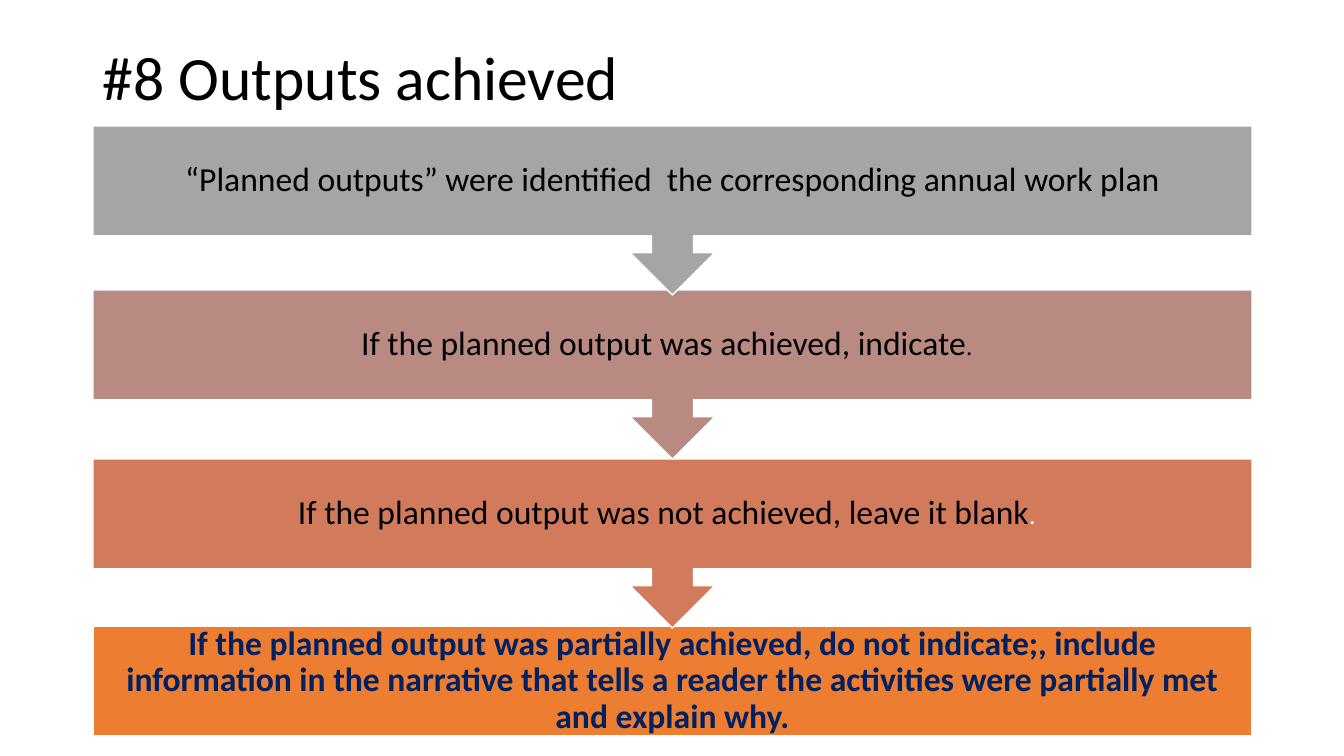
from pptx import Presentation
from pptx.dml.color import RGBColor
from pptx.enum import shapes, text
from pptx.util import Pt

EMU_PER_PIXEL = 914400 / 100.8
FONT = "Calibri"
COLORS = {
    "black": "000000", "white": "FFFFFF", "navy": "002060",
    "gray": "A5A5A5", "rose": "B98A82", "rust": "D17B5C", "orange": "ED7D31",
}
TITLE = "#8 Outputs achieved"
FULL_STOP = ".\u00a0\u00a0"
# Each step: top, fill, runs of (wording, size, colour, bold)
STEPS = [
    (126, "gray", [("“Planned outputs” were identified  the corresponding annual work plan",
                    24, "black", False)]),
    (290, "rose", [("If the planned output was achieved, indicate", 24, "black", False),
                   (FULL_STOP, 18, "black", False)]),
    (459, "rust", [("If the planned output was not achieved, leave it blank", 24, "black", False),
                   (FULL_STOP, 18, "white", False)]),
    (626, "orange", [("If the planned\u00a0output was partially achieved, do not indicate;, "
                      "include information in the narrative that tells a reader the "
                      "activities were partially met and explain why.", 24, "navy", True)]),
]
LEFT, WIDTH = 93, 1159
BOX_HEIGHT, CALLOUT_HEIGHT = 110, 169
INSET = 19


def px(length):
    """Turn pixels into EMU."""
    return round(length * EMU_PER_PIXEL)


def color(name):
    """Look up a named colour."""
    return RGBColor.from_string(COLORS[name])


def write(shape, runs, alignment):
    """Write one middle-anchored paragraph into a shape."""
    frame = shape.text_frame
    frame.word_wrap = True
    frame.vertical_anchor = text.MSO_ANCHOR.MIDDLE
    paragraph = frame.paragraphs[0]
    paragraph.alignment = alignment
    paragraph.line_spacing = 0.9
    for wording, size, color_name, bold in runs:
        run = paragraph.add_run()
        run.text = wording
        run.font.name = FONT
        run.font.size = Pt(size)
        run.font.bold = bold
        run.font.color.rgb = color(color_name)


def add_step(slide, top, fill, runs, is_last):
    """Add a step; every step but the last points down to the next."""
    kind = shapes.MSO_SHAPE.RECTANGLE if is_last else shapes.MSO_SHAPE.DOWN_ARROW_CALLOUT
    height = BOX_HEIGHT if is_last else CALLOUT_HEIGHT
    shape = slide.shapes.add_shape(kind, px(LEFT), px(top), px(WIDTH), px(height))
    shape.shadow.inherit = False
    shape.fill.solid()
    shape.fill.fore_color.rgb = color(fill)
    shape.line.color.rgb = color("white")
    shape.line.width = Pt(1)
    frame = shape.text_frame
    frame.margin_left = frame.margin_right = px(INSET)
    frame.margin_top = frame.margin_bottom = px(INSET)
    write(shape, runs, text.PP_ALIGN.CENTER)


presentation = Presentation()
presentation.slide_width, presentation.slide_height = px(1344), px(756)
slide = presentation.slides.add_slide(presentation.slide_layouts[6])

title = slide.shapes.add_textbox(px(LEFT), px(40), px(WIDTH), px(82))
write(title, [(TITLE, 44, "black", False)], text.PP_ALIGN.LEFT)

# Bottom step first, so that each arrow tip lies over the step below
for step in reversed(STEPS):
    add_step(slide, *step, is_last=step is STEPS[-1])

presentation.save("out.pptx")
